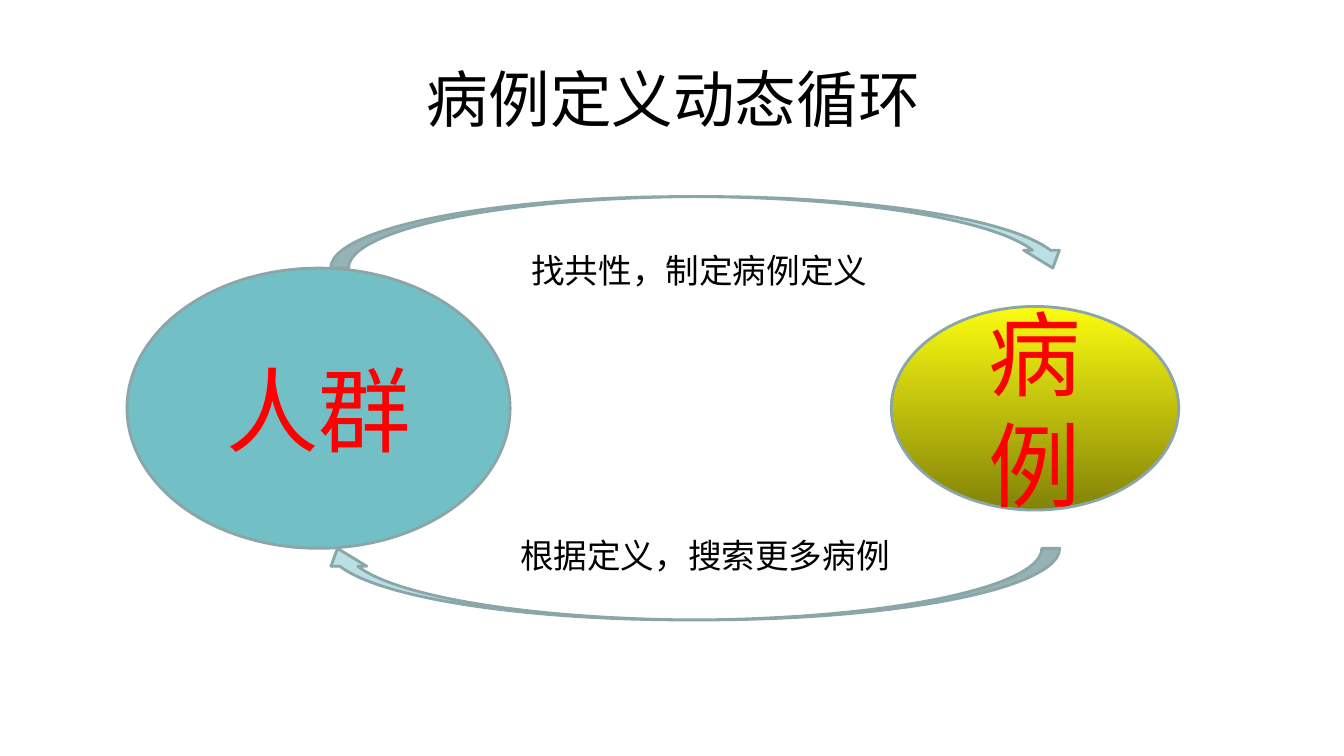
import pptx
import pptx.util
import pptx.dml.color
import pptx.enum.shapes
import pptx.enum.text

Inches, Pt = pptx.util.Inches, pptx.util.Pt
SHAPE = pptx.enum.shapes.MSO_SHAPE
ALIGN = pptx.enum.text.PP_ALIGN
ANCHOR = pptx.enum.text.MSO_ANCHOR


def rgb(color):
    return pptx.dml.color.RGBColor.from_string(color)


class CycleSlide:
    FONT = "Arial"
    BLACK, RED = "000000", "FF0000"
    OUTLINE, ARROW = "8AA6A8", "BBE0E3"

    def __init__(self, prs):
        self.s = prs.slides.add_slide(prs.slide_layouts[6])

    def set_text(self, sp, text, size, color, align, anchor):
        tf = sp.text_frame
        tf.word_wrap = True
        tf.vertical_anchor = anchor
        tf.text = text
        p = tf.paragraphs[0]
        p.alignment = align
        font = p.runs[0].font
        font.name, font.size = self.FONT, Pt(size)
        font.color.rgb = rgb(color)

    def text(self, box, text, size, align=ALIGN.LEFT, anchor=ANCHOR.TOP):
        sp = self.s.shapes.add_textbox(*map(Inches, box))
        self.set_text(sp, text, size, self.BLACK, align, anchor)

    def shape(self, kind, box, fills):
        """Add an outlined shape; two fills make a top-to-bottom gradient."""
        sp = self.s.shapes.add_shape(kind, *map(Inches, box))
        sp.shadow.inherit = False
        sp.line.color.rgb = rgb(self.OUTLINE)
        sp.line.width = Pt(2)
        if len(fills) == 1:
            sp.fill.solid()
            sp.fill.fore_color.rgb = rgb(fills[0])
        else:
            sp.fill.gradient()
            sp.fill.gradient_angle = 270
            for stop, color in zip(sp.fill.gradient_stops, fills):
                stop.color.rgb = rgb(color)
        return sp

    def ellipse(self, box, text, *fills):
        sp = self.shape(SHAPE.OVAL, box, fills)
        self.set_text(sp, text, 66, self.RED, ALIGN.CENTER, ANCHOR.MIDDLE)

    def arrow(self, left, top, rotation=0):
        sp = self.shape(SHAPE.CURVED_DOWN_ARROW, (left, top, 7.34, 0.71), [self.ARROW])
        sp.rotation = rotation

    def label(self, left, top, text):
        self.text((left, top, 4.12, 0.5), text, 24)


def main():
    prs = pptx.Presentation()
    prs.slide_width, prs.slide_height = Inches(13.33), Inches(7.5)

    cycle = CycleSlide(prs)
    cycle.text((0.68, 0.35, 12, 1.25), "病例定义动态循环", 44, ALIGN.CENTER, ANCHOR.MIDDLE)
    cycle.ellipse((1.26, 2.66, 3.8, 2.78), "人群", "72BFC5")
    cycle.ellipse((8.84, 3.04, 2.85, 2.02), "病例", "FBFB11", "838309")
    cycle.arrow(3.28, 1.95)
    cycle.label(5.17, 2.43, "找共性，制定病例定义")
    cycle.arrow(3.17, 5.44, rotation=180)
    cycle.label(5.06, 5.26, "根据定义，搜索更多病例")

    prs.save("out.pptx")


if __name__ == "__main__":
    main()
